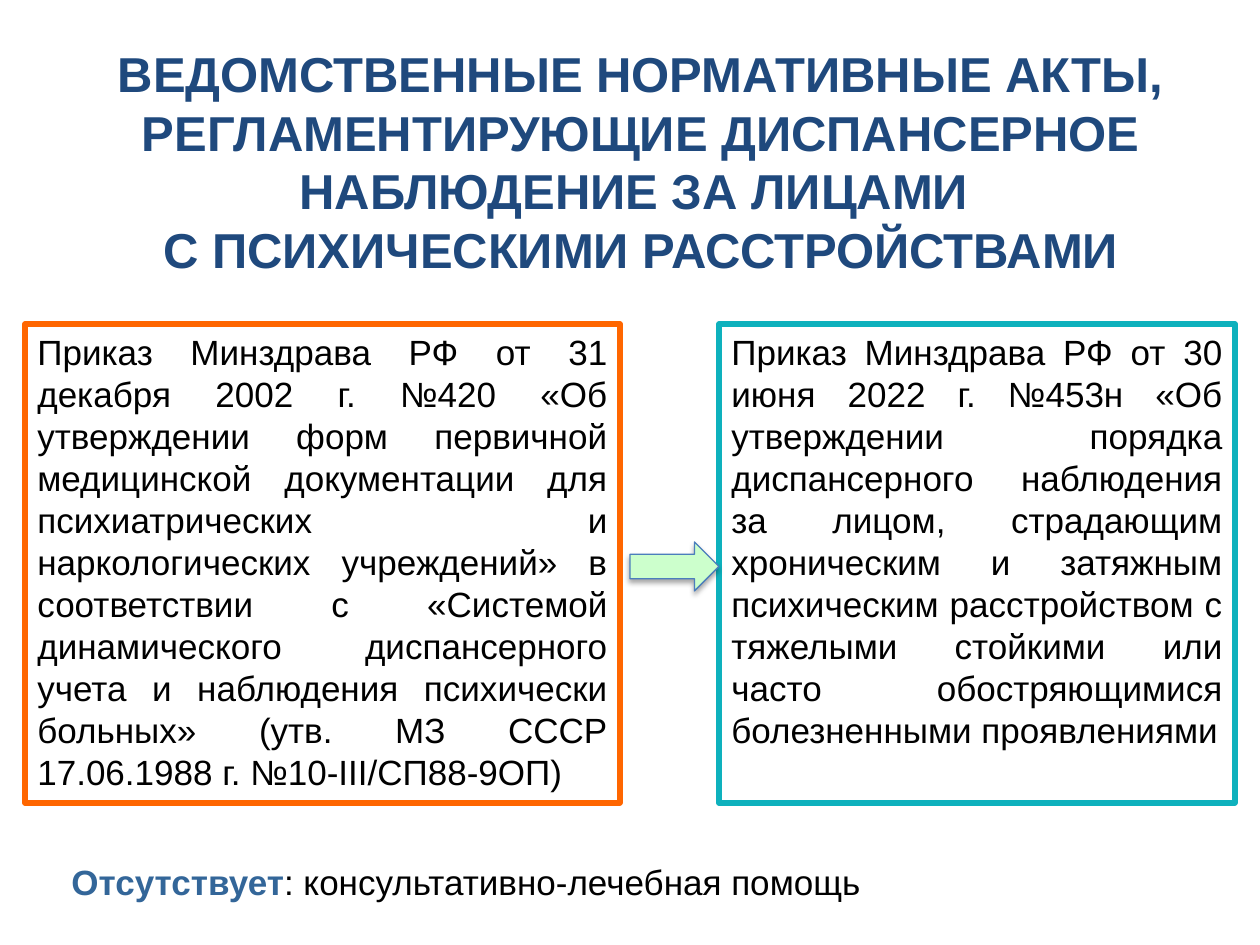
from lxml import etree
from pptx import Presentation, util as u
from pptx.dml.color import RGBColor
from pptx.enum import shapes, text
from pptx.oxml.ns import qn

PX = 914400 / 126
HUES = {"navy": "1F497D", "black": "000000", "orange": "FF6600", "teal": "0EB1BD",
        "mint": "CCFFCC", "edge": "4B7EBC", "blue": "336699"}


def place(*box):
    return [round(n * PX) for n in box]


def write(par, words, size, hue, bold=False):
    run = par.add_run()
    run.text = words
    run.font.name = "Arial"
    run.font.size = u.Pt(size)
    run.font.bold = bold
    run.font.color.rgb = RGBColor.from_string(HUES[hue])


deck = Presentation()
deck.slide_width, deck.slide_height = place(1260, 945)
slide = deck.slides.add_slide(deck.slide_layouts[6])

# Title
frame = slide.shapes.add_textbox(*place(35, 37, 1211, 251)).text_frame
frame.word_wrap = True
lines = ["ВЕДОМСТВЕННЫЕ НОРМАТИВНЫЕ АКТЫ, РЕГЛАМЕНТИРУЮЩИЕ ДИСПАНСЕРНОЕ НАБЛЮДЕНИЕ ЗА ЛИЦАМИ ",
         "С ПСИХИЧЕСКИМИ РАССТРОЙСТВАМИ"]
for i, line in enumerate(lines):
    par = frame.add_paragraph() if i else frame.paragraphs[0]
    par.alignment = text.PP_ALIGN.CENTER
    write(par, line, 28, "navy", True)

# Old and new orders
orders = [
    (25, 595, "orange",
     "Приказ Минздрава РФ от 31 декабря 2002 г. №420 «Об утверждении форм первичной "
     "медицинской документации для психиатрических и наркологических учреждений» "
     "в соответствии с «Системой динамического диспансерного учета и наблюдения "
     "психически больных» (утв. МЗ СССР 17.06.1988 г. №10-III/СП88-9ОП)"),
    (719, 516, "teal",
     "Приказ Минздрава РФ от 30 июня 2022 г. №453н «Об утверждении порядка "
     "диспансерного наблюдения за лицом, страдающим хроническим и затяжным "
     "психическим расстройством с тяжелыми стойкими или часто обостряющимися "
     "болезненными проявлениями"),
]
for left, width, hue, words in orders:
    card = slide.shapes.add_shape(shapes.MSO_SHAPE.RECTANGLE, *place(left, 324, width, 479))
    card.shadow.inherit = False
    card.fill.background()
    card.line.color.rgb = RGBColor.from_string(HUES[hue])
    card.line.width = u.Pt(3)
    frame = card.text_frame
    frame.word_wrap = True
    frame.vertical_anchor = text.MSO_ANCHOR.TOP
    par = frame.paragraphs[0]
    par.alignment = text.PP_ALIGN.JUSTIFY
    write(par, words, 20, "black")

# Arrow with a soft shadow below
arrow = slide.shapes.add_shape(shapes.MSO_SHAPE.RIGHT_ARROW, *place(630, 542, 89, 49))
arrow.fill.solid()
arrow.fill.fore_color.rgb = RGBColor.from_string(HUES["mint"])
arrow.line.color.rgb = RGBColor.from_string(HUES["edge"])
arrow.line.width = u.Pt(0.75)
arrow.shadow.inherit = False
glow = etree.SubElement(arrow.element.spPr.find(qn("a:effectLst")), qn("a:outerShdw"),
                        blurRad=str(u.Pt(3.1)), dist=str(u.Pt(1.8)), dir="5400000",
                        rotWithShape="0")
tone = etree.SubElement(glow, qn("a:srgbClr"), val=HUES["black"])
etree.SubElement(tone, qn("a:alpha"), val="35000")

# Footnote
frame = slide.shapes.add_textbox(*place(59, 854, 830, 55)).text_frame
frame.word_wrap = False
par = frame.paragraphs[0]
write(par, "Отсутствует", 20, "blue", True)
write(par, ": консультативно-лечебная помощь", 20, "black")

deck.save("out.pptx")
